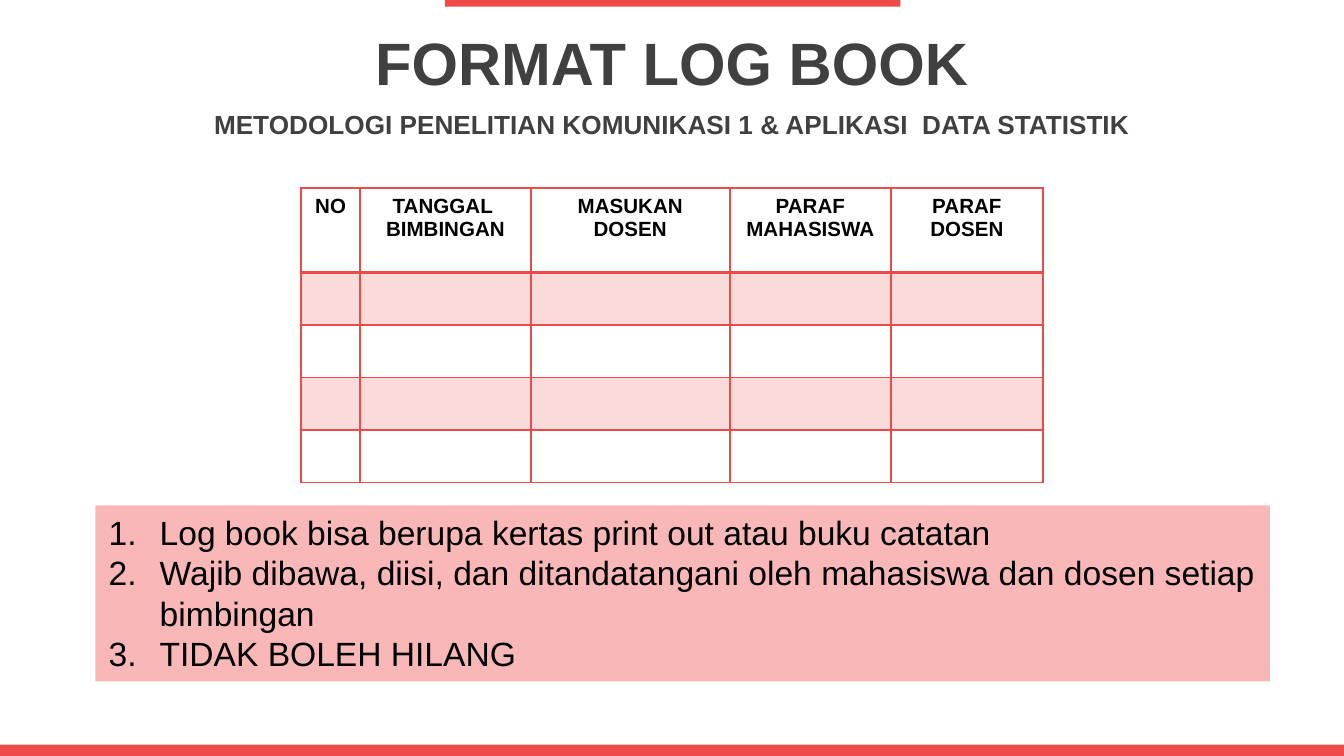
from lxml.etree import SubElement
from pptx import Presentation
from pptx.dml.color import RGBColor
from pptx.enum.shapes import MSO_SHAPE as Kind
from pptx.enum.text import MSO_ANCHOR as Anchor, PP_ALIGN as Align
from pptx.oxml import parse_xml
from pptx.oxml.ns import nsdecls, qn
from pptx.util import Inches, Pt

RED, PINK, GREY, BLACK = "EF4A4A", "F9B7B7", "404040", "000000"

BARS = [(3.31, 0, 3.39, 0.05), (0, 5.54, 10, 0.09)]
TITLES = [
    ("FORMAT LOG BOOK", 32, (0, 0.14, 10, 0.63)),
    ("METODOLOGI PENELITIAN KOMUNIKASI 1 & APLIKASI  DATA STATISTIK", 14,
     (0, 0.77, 10, 0.31)),
]
HEADS = [["NO"], ["TANGGAL ", "BIMBINGAN"], ["MASUKAN DOSEN"],
         ["PARAF", "MAHASISWA"], ["PARAF", "DOSEN"]]
COLS = [0.44, 1.27, 1.48, 1.2, 1.13]
ROWS = [0.63] + [0.39] * 4
RULES = [
    "Log book bisa berupa kertas print out atau buku catatan",
    "Wajib dibawa, diisi, dan ditandatangani oleh mahasiswa dan dosen setiap bimbingan",
    "TIDAK BOLEH HILANG",
]


def rgb(code):
    return RGBColor.from_string(code)


def place(box):
    return [Inches(n) for n in box]


def write(frame, lines, size, color, bold=False, align=Align.CENTER):
    style = {"name": "Arial", "size": Pt(size), "bold": bold}
    for i, line in enumerate(lines):
        para = frame.add_paragraph() if i else frame.paragraphs[0]
        para.alignment = align
        run = para.add_run()
        run.text = line
        for key, value in style.items():
            setattr(run.font, key, value)
        run.font.color.rgb = rgb(color)


def add_rect(box, color):
    shape = slide.shapes.add_shape(Kind.RECTANGLE, *place(box))
    shape.shadow.inherit = False
    shape.fill.solid()
    shape.fill.fore_color.rgb = rgb(color)
    shape.line.fill.background()
    return shape


def edge(cell, low):
    """Draw the four borders; low is the width of the bottom one."""
    props = cell._tc.get_or_add_tcPr()
    for i, (side, width) in enumerate(zip("LRTB", (1, 1, 1, low))):
        props.insert(i, parse_xml(
            f'<a:ln{side} {nsdecls("a")} w="{Pt(width)}"><a:solidFill>'
            f'<a:srgbClr val="{RED}"/></a:solidFill></a:ln{side}>'))


def tint(cell):
    cell.fill.solid()
    cell.fill.fore_color.rgb = rgb(RED)
    color = cell._tc.tcPr.find(".//" + qn("a:srgbClr"))
    SubElement(color, qn("a:alpha")).set("val", "20000")


deck = Presentation()
deck.slide_width = Inches(10)
deck.slide_height = deck.slide_width * 9 // 16
slide = deck.slides.add_slide(deck.slide_layouts[6])

for box in BARS:
    add_rect(box, RED)

for text, size, box in TITLES:
    frame = slide.shapes.add_textbox(*place(box)).text_frame
    frame.word_wrap = True
    frame.vertical_anchor = Anchor.MIDDLE
    write(frame, [text], size, GREY, bold=True)

table = slide.shapes.add_table(
    len(ROWS), len(COLS), *place((2.24, 1.4, sum(COLS), sum(ROWS)))).table
table.first_row = table.horz_banding = False
for col, width in zip(table.columns, COLS):
    col.width = Inches(width)
for r, height in enumerate(ROWS):
    table.rows[r].height = Inches(height)
    for c, head in enumerate(HEADS):
        cell = table.cell(r, c)
        if r % 2:
            tint(cell)
        else:
            cell.fill.background()
        edge(cell, 1 if r else 2)
        if r == 0:
            write(cell.text_frame, head, 11, BLACK, bold=True)
        else:
            para = cell.text_frame.paragraphs[0]
            SubElement(para._p, qn("a:endParaRPr")).set("sz", "1100")

frame = add_rect((0.71, 3.76, 8.74, 1.31), PINK).text_frame
frame.word_wrap = True
frame.vertical_anchor = Anchor.TOP
write(frame, RULES, 18, BLACK, align=Align.LEFT)
for para in frame.paragraphs:
    props = para._p.get_or_add_pPr()
    props.set("marL", str(Inches(0.38)))
    props.set("indent", str(-Inches(0.38)))
    SubElement(props, qn("a:buFont")).set("typeface", "Arial")
    SubElement(props, qn("a:buAutoNum")).set("type", "arabicPeriod")

deck.save("out.pptx")
